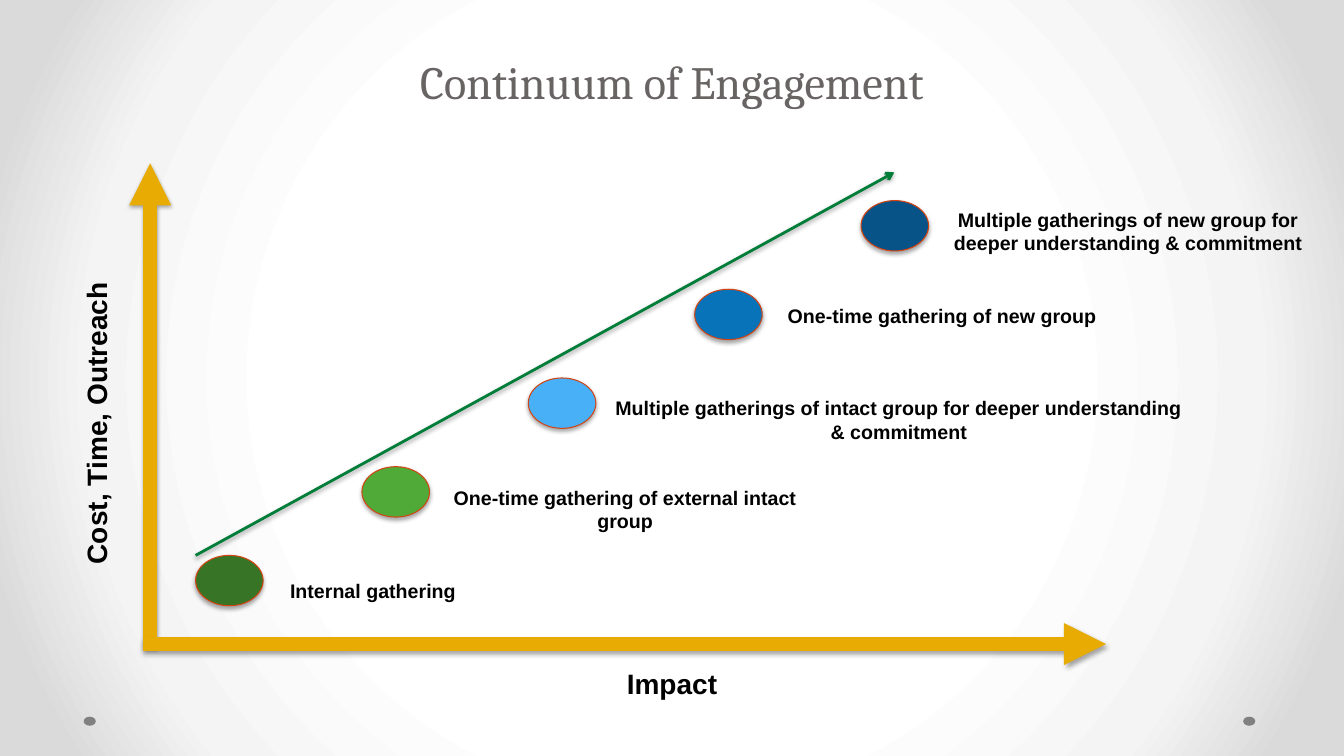
from dataclasses import dataclass

from lxml import etree
from pptx import Presentation
from pptx import util as u
from pptx.dml.color import RGBColor
from pptx.enum import shapes, text
from pptx.oxml import ns

COLORS = {
    "title": "696464", "ink": "000000", "axis": "E7AB03", "trend": "007E39",
    "outline": "D34412", "dot": "808080",
    "dark green": "377426", "green": "50AA38",
    "light blue": "48B0F6", "blue": "0973BA", "dark blue": "075387",
}
BACKGROUND_STOPS = ((50, "FFFFFF"), (76, "F4F4F4"), (92, "DADADA"))


@dataclass
class Label:
    wording: str
    left: float
    top: float
    width: float
    height: float
    size: int = 14
    font: str = "Arial"
    color: str = "ink"
    bold: bool = True
    rotation: int = 0
    anchor: text.MSO_ANCHOR = text.MSO_ANCHOR.TOP


@dataclass
class Stage:
    color: str
    label: Label


@dataclass
class Arrow:
    start: tuple[float, float]
    end: tuple[float, float]
    color: str
    weight: int
    head: str
    shadow_opacity: int = 35


def rgb(name: str) -> RGBColor:
    return RGBColor.from_string(COLORS[name])


def add_xml(parent, tag: str, **attributes):
    values = {key: str(value) for key, value in attributes.items()}
    return etree.SubElement(parent, ns.qn(tag), values)


def add_shadow(effects, opacity: int = 35) -> None:
    shadow = add_xml(effects, "a:outerShdw", blurRad=u.Pt(3.1), dist=u.Pt(1.8),
                     dir=90 * 60000, algn="ctr", rotWithShape=0)
    tint = add_xml(shadow, "a:srgbClr", val=COLORS["ink"])
    add_xml(tint, "a:alpha", val=opacity * 1000)


def paint_background(slide) -> None:
    slide.background.fill.gradient()
    gradient = slide.background._cSld.find(".//" + ns.qn("a:gradFill"))
    for child in list(gradient):
        gradient.remove(child)
    stops = add_xml(gradient, "a:gsLst")
    for position, color in BACKGROUND_STOPS:
        stop = add_xml(stops, "a:gs", pos=position * 1000)
        add_xml(stop, "a:srgbClr", val=color)
    circle = add_xml(gradient, "a:path", path="circle")
    add_xml(circle, "a:fillToRect", l=50000, t=50000, r=50000, b=50000)


def add_label(slide, label: Label) -> None:
    box = slide.shapes.add_textbox(u.Inches(label.left), u.Inches(label.top),
                                   u.Inches(label.width), u.Inches(label.height))
    box.rotation = label.rotation
    frame = box.text_frame
    frame.word_wrap = True
    frame.vertical_anchor = label.anchor
    paragraph = frame.paragraphs[0]
    paragraph.alignment = text.PP_ALIGN.CENTER
    run = paragraph.add_run()
    run.text = label.wording
    run.font.name = label.font
    run.font.size = u.Pt(label.size)
    run.font.bold = label.bold
    run.font.color.rgb = rgb(label.color)


def add_ellipse(slide, left: float, top: float, width: float, height: float, color: str):
    ellipse = slide.shapes.add_shape(shapes.MSO_SHAPE.OVAL, u.Inches(left), u.Inches(top),
                                     u.Inches(width), u.Inches(height))
    ellipse.shadow.inherit = False
    ellipse.fill.solid()
    ellipse.fill.fore_color.rgb = rgb(color)
    ellipse.line.fill.background()
    return ellipse


def add_marker(slide, left: float, top: float, color: str) -> None:
    marker = add_ellipse(slide, left, top, 0.67, 0.5, color)
    marker.line.color.rgb = rgb("outline")
    marker.line.width = u.Pt(0.75)
    add_shadow(marker._element.spPr.find(ns.qn("a:effectLst")))


def add_arrow(slide, arrow: Arrow) -> None:
    ends = [u.Inches(value) for value in (*arrow.start, *arrow.end)]
    line = slide.shapes.add_connector(shapes.MSO_CONNECTOR.STRAIGHT, *ends)
    line.line.color.rgb = rgb(arrow.color)
    line.line.width = u.Pt(arrow.weight)
    properties = line._element.spPr
    add_xml(properties.find(ns.qn("a:ln")), "a:tailEnd", type=arrow.head)
    add_shadow(add_xml(properties, "a:effectLst"), arrow.shadow_opacity)


TITLE = Label("Continuum of Engagement", 1.75, 0.03, 9.83, 1.1, size=33, font="Cambria",
              color="title", bold=False, anchor=text.MSO_ANCHOR.BOTTOM)
AXES = (
    Arrow((1.49, 6.42), (1.49, 1.62), "axis", 10, "triangle"),
    Arrow((1.42, 6.39), (10.97, 6.39), "axis", 10, "triangle"),
)
AXIS_TITLES = (
    Label("Cost, Time, Outreach", -0.77, 3.98, 3.45, 0.44, size=20, rotation=270),
    Label("Impact", 4.37, 6.56, 4.59, 0.44, size=20),
)
STAGES = (
    Stage("dark green", Label("Internal gathering", 2.25, 5.69, 2.9, 0.34)),
    Stage("green", Label("One-time gathering of external intact group",
                         4.24, 4.77, 3.92, 0.57)),
    Stage("light blue", Label("Multiple gatherings of intact group for deeper "
                              "understanding & commitment", 6, 3.88, 5.83, 0.57)),
    Stage("blue", Label("One-time gathering of new group", 6.43, 2.97, 5.83, 0.34)),
    Stage("dark blue", Label("Multiple gatherings of new group for deeper "
                             "understanding & commitment", 9.12, 2.01, 4.14, 0.57)),
)
FIRST_LEFT, FIRST_TOP = 1.94, 5.51
STEP_RIGHT, STEP_UP = 1.65, 0.88
TREND = Arrow((FIRST_LEFT, FIRST_TOP), (8.87, 1.71), "trend", 2, "arrow", 38)


def main() -> None:
    deck = Presentation()
    deck.slide_width, deck.slide_height = u.Inches(13.33), u.Inches(7.5)
    slide = deck.slides.add_slide(deck.slide_layouts[6])

    # Background and corner dots
    paint_background(slide)
    for dot_left in (12.33, 0.83):
        add_ellipse(slide, dot_left, 7.11, 0.12, 0.09, "dot")

    # Title and axes
    add_label(slide, TITLE)
    for axis in AXES:
        add_arrow(slide, axis)
    for axis_title in AXIS_TITLES:
        add_label(slide, axis_title)

    # Rising stages and trend
    for step, stage in enumerate(STAGES):
        add_marker(slide, FIRST_LEFT + step * STEP_RIGHT,
                   FIRST_TOP - step * STEP_UP, stage.color)
        add_label(slide, stage.label)
    add_arrow(slide, TREND)

    deck.save("out.pptx")


if __name__ == "__main__":
    main()
